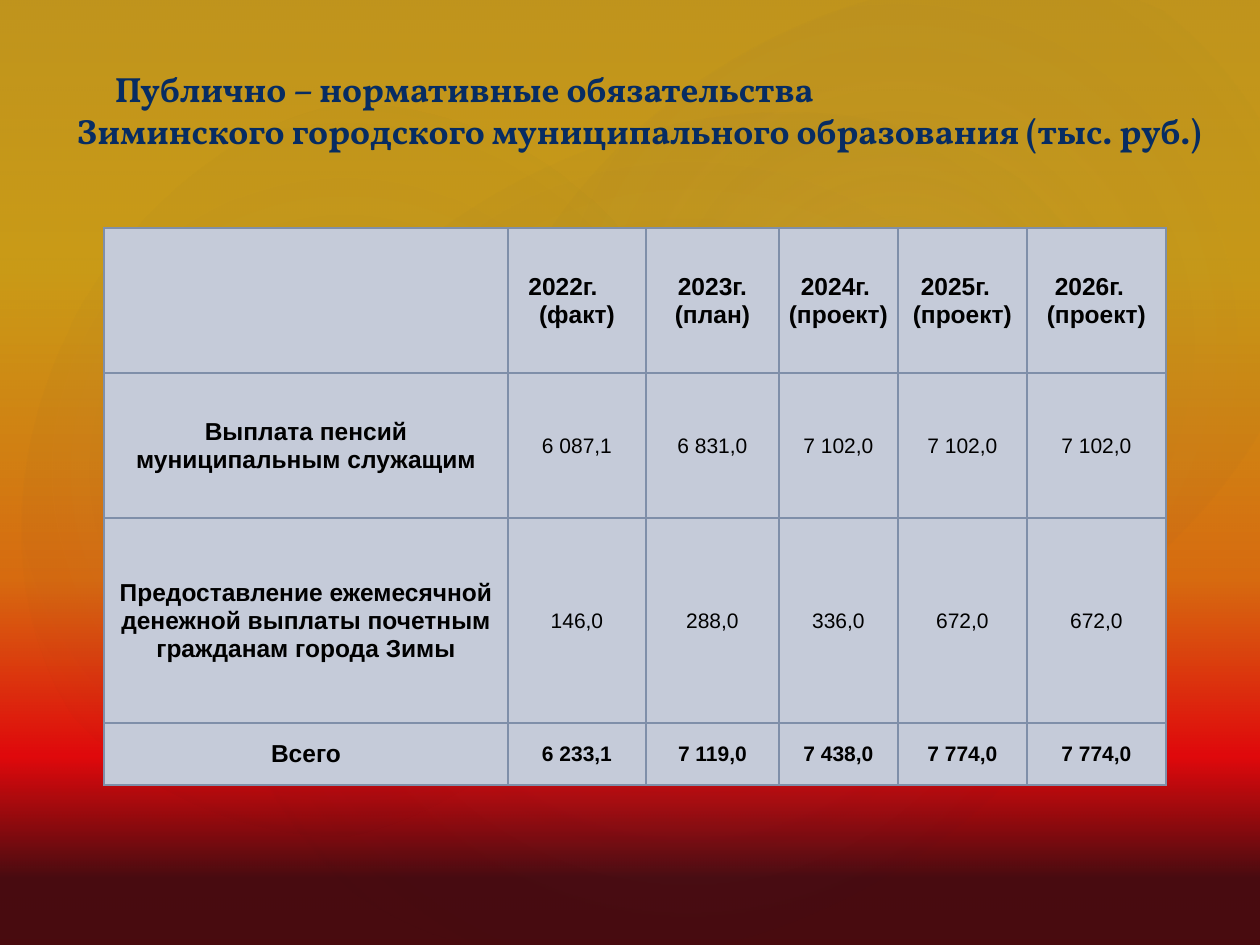
from dataclasses import dataclass

import lxml.etree
import pptx
import pptx.dml.color
import pptx.enum.shapes
import pptx.enum.text
import pptx.oxml.ns
import pptx.util

EMU_PER_PX = 914400 / 126
NAVY, BLACK, CELL, RULE = "072C62", "000000", "C5CBD9", "7F8FA9"
qn = pptx.oxml.ns.qn
SHAPES = pptx.enum.shapes.MSO_SHAPE


@dataclass
class Stop:
    position: int
    color: str
    opacity: int = 100


@dataclass
class Glow:
    left: int
    top: int
    width: int
    height: int
    rotation: float
    opacity: int


@dataclass
class Line:
    """A centred line; shift moves its middle to the left, in px."""
    text: str
    size: int
    bold: bool = True
    shift: int = 0
    font: str = "Arial"
    color: str = BLACK


SKY = [Stop(28, "FFC000"), Stop(61, "FF7A00"), Stop(80, "FF0300"), Stop(93, "4D0808")]
VEIL = [Stop(0, "504652", 36), Stop(100, "242852", 10)]
GLOWS = [
    Glow(189, 144, 998, 786, 328.7, 7),
    Glow(-38, 161, 764, 617, 294.3, 8),
    Glow(451, 16, 893, 655, 328.7, 8),
]
TITLE = [
    Line("Публично – нормативные обязательства", 20, True, 175, "Vollkorn", NAVY),
    Line("Зиминского городского муниципального образования (тыс. руб.)",
         20, True, 0, "Vollkorn", NAVY),
]
COLUMN_WIDTHS = [404, 138, 133, 119, 129, 139]
ROW_HEIGHTS = [145, 145, 205, 62]
YEARS = [("2022г.", "(факт)", 14), ("2023г.", "(план)", 0), ("2024г.", "(проект)", 3),
         ("2025г.", "(проект)", 7), ("2026г.", "(проект)", 7)]
PAYMENTS = [
    ("Выплата пенсий муниципальным служащим",
     ["6 087,1", "6 831,0", "7 102,0", "7 102,0", "7 102,0"]),
    ("Предоставление ежемесячной денежной выплаты почетным гражданам города Зимы",
     ["146,0", "288,0", "336,0", "672,0", "672,0"]),
    ("Всего", ["6 233,1", "7 119,0", "7 438,0", "7 774,0", "7 774,0"]),
]


def px(length: int) -> pptx.util.Emu:
    return pptx.util.Emu(round(length * EMU_PER_PX))


def rgb(color: str) -> pptx.dml.color.RGBColor:
    return pptx.dml.color.RGBColor.from_string(color)


def set_gradient(fill, owner, stops: list[Stop], radial: bool = False) -> None:
    """Replace the fill of owner, an spPr or bgPr element, by a gradient."""
    fill.solid()
    gradient = lxml.etree.Element(qn("a:gradFill"), rotWithShape="1")
    stop_list = lxml.etree.SubElement(gradient, qn("a:gsLst"))
    for stop in stops:
        mark = lxml.etree.SubElement(stop_list, qn("a:gs"), pos=str(stop.position * 1000))
        color = lxml.etree.SubElement(mark, qn("a:srgbClr"), val=stop.color)
        if stop.opacity < 100:
            lxml.etree.SubElement(color, qn("a:alpha"), val=str(stop.opacity * 1000))
    if radial:
        path = lxml.etree.SubElement(gradient, qn("a:path"), path="circle")
        lxml.etree.SubElement(path, qn("a:fillToRect"),
                              l="50000", t="50000", r="50000", b="50000")
    else:
        lxml.etree.SubElement(gradient, qn("a:lin"), ang="5400000", scaled="0")
    owner.replace(owner.find(qn("a:solidFill")), gradient)


def add_plain_shape(slide, kind, left: int, top: int, width: int, height: int):
    shape = slide.shapes.add_shape(kind, px(left), px(top), px(width), px(height))
    shape.shadow.inherit = False
    shape.fill.background()
    shape.line.fill.background()
    return shape


def write_lines(frame, lines: list[Line]) -> None:
    frame.word_wrap = True
    for index, line in enumerate(lines):
        paragraph = frame.add_paragraph() if index else frame.paragraphs[0]
        paragraph.alignment = pptx.enum.text.PP_ALIGN.CENTER
        paragraph._p.get_or_add_pPr().set("marR", str(px(2 * line.shift)))
        run = paragraph.add_run()
        run.text = line.text
        run.font.name = line.font
        run.font.size = pptx.util.Pt(line.size)
        run.font.bold = line.bold
        run.font.color.rgb = rgb(line.color)


def set_borders(cell, horizontal_width: float) -> None:
    widths = {"a:lnL": 1, "a:lnR": 1, "a:lnT": horizontal_width, "a:lnB": horizontal_width}
    properties = cell._tc.get_or_add_tcPr()
    for index, (side, width) in enumerate(widths.items()):
        border = lxml.etree.Element(qn(side), w=str(pptx.util.Pt(width)))
        solid = lxml.etree.SubElement(border, qn("a:solidFill"))
        lxml.etree.SubElement(solid, qn("a:srgbClr"), val=RULE)
        properties.insert(index, border)


def table_lines() -> list[list[list[Line]]]:
    """Lines of every cell, row by row."""
    header = [[Line(year, 14, shift=shift), Line(status, 14)] for year, status, shift in YEARS]
    rows = [[[]] + header]
    for label, amounts in PAYMENTS:
        is_total = label == PAYMENTS[-1][0]
        rows.append([[Line(label, 14)]] + [[Line(amount, 12, is_total)] for amount in amounts])
    return rows


def add_obligations(slide) -> None:
    frame = slide.shapes.add_table(
        len(ROW_HEIGHTS), len(COLUMN_WIDTHS), px(104), px(228),
        px(sum(COLUMN_WIDTHS)), px(sum(ROW_HEIGHTS)))
    table = frame.table
    table.first_row = table.horz_banding = False
    for column, width in zip(table.columns, COLUMN_WIDTHS):
        column.width = px(width)
    for row, height in zip(table.rows, ROW_HEIGHTS):
        row.height = px(height)
    for row_index, row in enumerate(table_lines()):
        for column_index, lines in enumerate(row):
            cell = table.cell(row_index, column_index)
            cell.fill.solid()
            cell.fill.fore_color.rgb = rgb(CELL)
            cell.vertical_anchor = pptx.enum.text.MSO_ANCHOR.MIDDLE
            cell.margin_left = cell.margin_right = cell.margin_top = px(1)
            cell.margin_bottom = 0
            set_borders(cell, 1.5 if row_index == len(ROW_HEIGHTS) - 1 else 1)
            write_lines(cell.text_frame, lines)


def main() -> None:
    deck = pptx.Presentation()
    deck.slide_width, deck.slide_height = px(1260), px(945)
    slide = deck.slides.add_slide(deck.slide_layouts[6])

    sky = slide.background.fill
    sky.solid()
    set_gradient(sky, slide._element.cSld.find(qn("p:bg")).find(qn("p:bgPr")), SKY)
    veil = add_plain_shape(slide, SHAPES.RECTANGLE, 0, 0, 1260, 945)
    set_gradient(veil.fill, veil._element.spPr, VEIL)
    for glow in GLOWS:
        ellipse = add_plain_shape(slide, SHAPES.OVAL, glow.left, glow.top,
                                  glow.width, glow.height)
        ellipse.rotation = glow.rotation
        stops = [Stop(0, "C4BCC6", glow.opacity), Stop(58, "242852", 0)]
        set_gradient(ellipse.fill, ellipse._element.spPr, stops, radial=True)

    title = add_plain_shape(slide, SHAPES.ROUNDED_RECTANGLE, 44, 55, 1191, 110)
    title.text_frame.vertical_anchor = pptx.enum.text.MSO_ANCHOR.MIDDLE
    write_lines(title.text_frame, TITLE)
    add_obligations(slide)
    deck.save("out.pptx")


if __name__ == "__main__":
    main()
